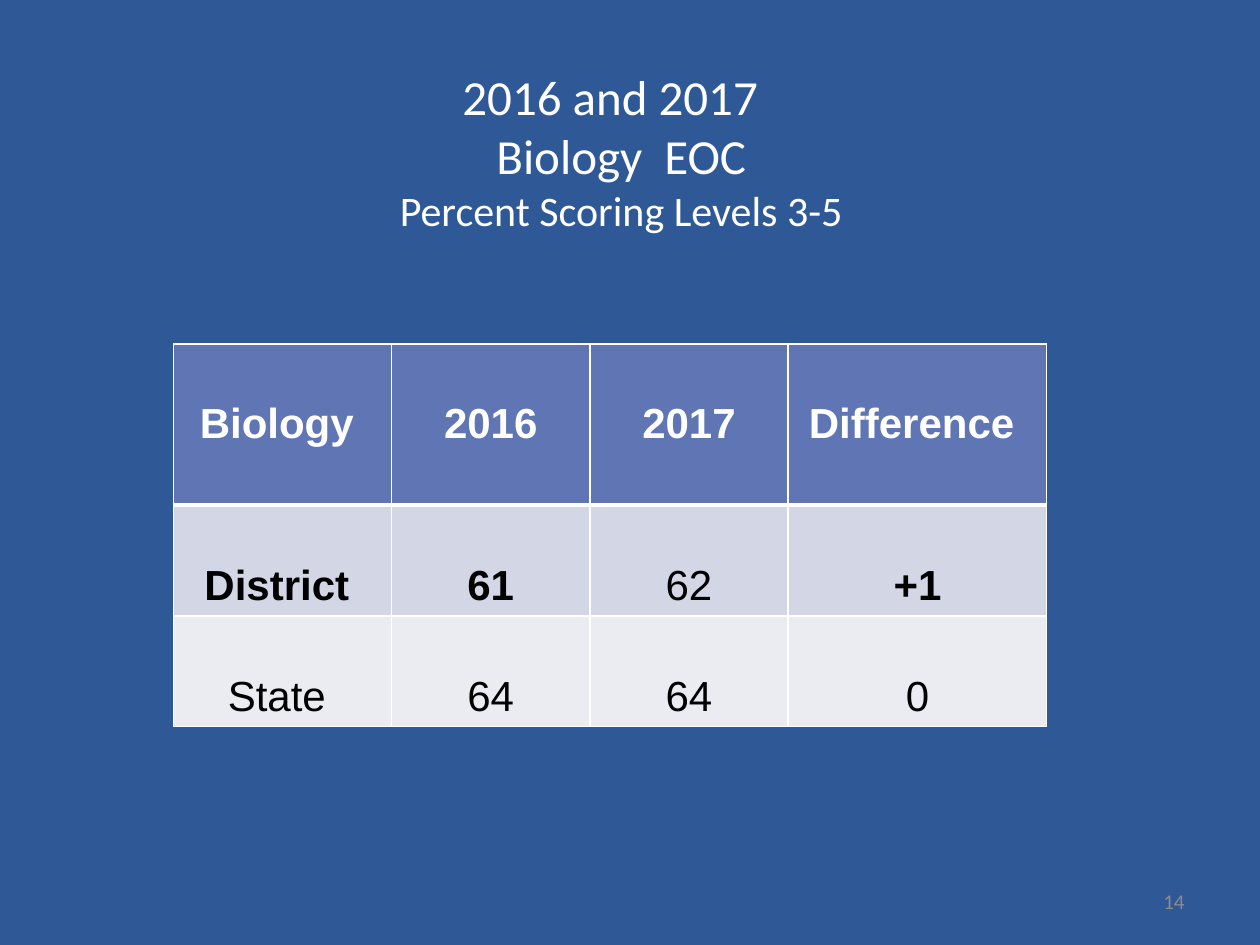
from lxml.etree import SubElement
from pptx import Presentation
from pptx.dml.color import RGBColor
from pptx.enum.text import MSO_ANCHOR, PP_ALIGN
from pptx.oxml.ns import qn
from pptx.util import Pt

# Content
TITLE = "2016 and 2017  \vBiology  EOC\vPercent Scoring Levels 3-5"
TITLE_SIZES = [28, 28, 24]
ROWS = [
    ["Biology ", "2016", "2017", "Difference "],
    ["District ", "61", "62", "+1"],
    ["State ", "64", "64", "0"],
]
BOLD = [[True] * 4, [True, True, False, True], [False] * 4]
ROW_FILLS = ["6076B4", "D2D6E5", "EAECF2"]
ROW_HEIGHTS = [92, 63.4, 63.4]
COLUMN_WIDTHS = [124.6, 113.3, 113.3, 147.8]
PAGE_NUMBER = "14"
WHITE, BLACK, GRAY, NAVY = "FFFFFF", "000000", "8C8C8C", "2F5897"


def color(value):
    return RGBColor.from_string(value)


def format_span(span, font, size, shade, bold=False):
    span.font.name = font
    span.font.size = Pt(size)
    span.font.bold = bold
    span.font.color.rgb = color(shade)


def add_text(page, place, text, sizes, shade, align):
    box = page.shapes.add_textbox(*[Pt(value) for value in place])
    frame = box.text_frame
    frame.word_wrap = True
    frame.vertical_anchor = MSO_ANCHOR.MIDDLE
    para = frame.paragraphs[0]
    para.text = text
    para.alignment = align
    for span, size in zip(para.runs, sizes):
        format_span(span, "Calibri", size, shade)


def add_borders(cell, widths):
    properties = cell._tc.get_or_add_tcPr()
    for side, width in zip(("lnL", "lnR", "lnT", "lnB"), widths):
        line = SubElement(properties, qn(f"a:{side}"), w=str(Pt(width)))
        fill = SubElement(line, qn("a:solidFill"))
        SubElement(fill, qn("a:srgbClr"), val=WHITE)


deck = Presentation()
deck.slide_width, deck.slide_height = Pt(720), Pt(540)
page = deck.slides.add_slide(deck.slide_layouts[6])
page.background.fill.solid()
page.background.fill.fore_color.rgb = color(NAVY)

# Title
add_text(page, (31, 15, 648, 142), TITLE, TITLE_SIZES, WHITE, PP_ALIGN.CENTER)

# Score table
table = page.shapes.add_table(
    len(ROWS), len(COLUMN_WIDTHS), Pt(99.2), Pt(196.5),
    Pt(sum(COLUMN_WIDTHS)), Pt(sum(ROW_HEIGHTS))).table
for column, width in zip(table.columns, COLUMN_WIDTHS):
    column.width = Pt(width)
for r, texts in enumerate(ROWS):
    table.rows[r].height = Pt(ROW_HEIGHTS[r])
    is_header = r == 0
    for c, text in enumerate(texts):
        cell = table.cell(r, c)
        # A thick rule separates the header from the body
        add_borders(cell, (1, 1, 3 if r == 1 else 1, 3 if is_header else 1))
        cell.fill.solid()
        cell.fill.fore_color.rgb = color(ROW_FILLS[r])
        cell.vertical_anchor = MSO_ANCHOR.MIDDLE if is_header else MSO_ANCHOR.BOTTOM
        para = cell.text_frame.paragraphs[0]
        para.text = text
        para.alignment = PP_ALIGN.CENTER
        format_span(para.runs[0], "Arial", 24, WHITE if is_header else BLACK, BOLD[r][c])

# Page number
add_text(page, (516, 500.5, 168, 28.8), PAGE_NUMBER, [12], GRAY, PP_ALIGN.RIGHT)

deck.save("out.pptx")
